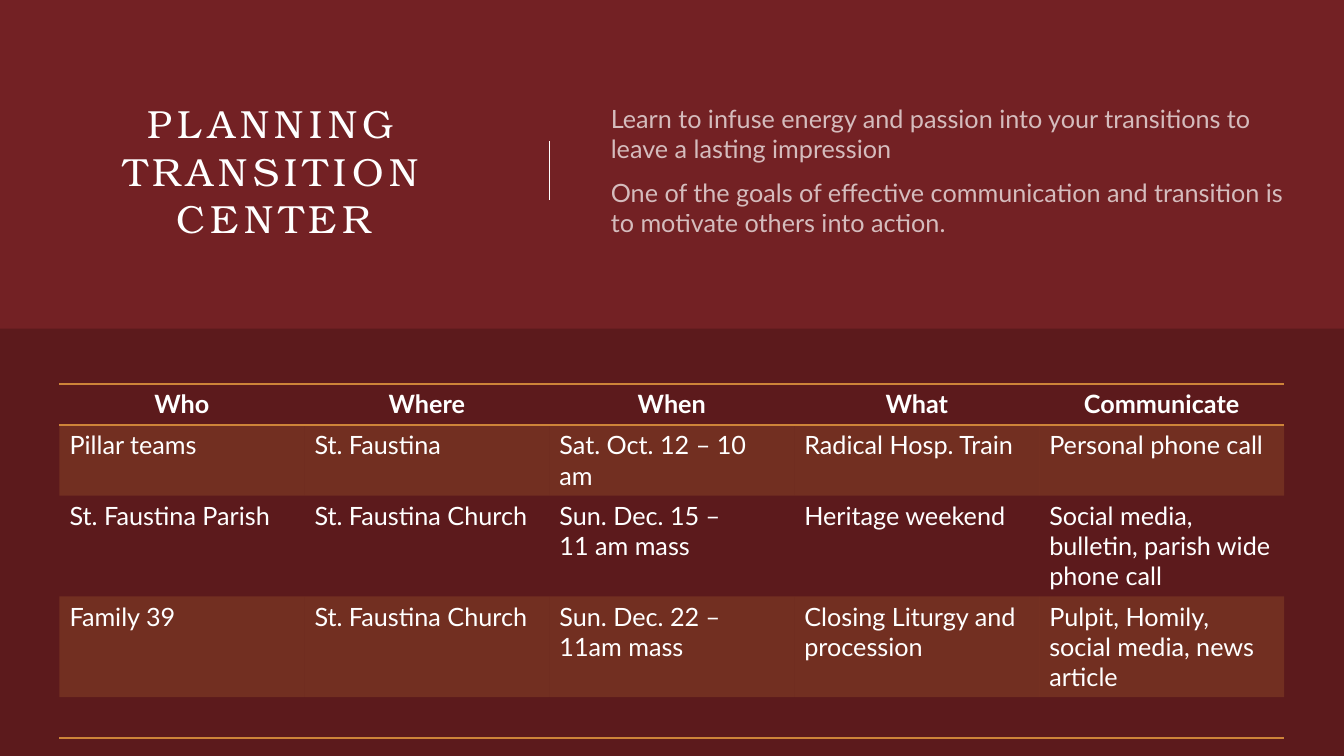
from lxml import etree
from pptx import Presentation
from pptx import util as u
from pptx.dml.color import RGBColor
from pptx.enum import shapes, text
from pptx.oxml.ns import qn

Pt = u.Pt
WINE = RGBColor(0x73, 0x21, 0x24)
BLACK = RGBColor(0, 0, 0)
WHITE = RGBColor(255, 255, 255)
AMBER = RGBColor(0xCE, 0x84, 0x39)
NO_TABLE_STYLE = "{2D5ABB26-0587-4C30-8999-92F81FD0307C}"

INTRO = [
    "Learn to infuse energy and passion into your transitions to leave a lasting impression",
    "One of the goals of effective communication and transition is to motivate others into action.",
]
SCHEDULE = [
    ["Who", "Where", "When", "What", "Communicate"],
    ["Pillar teams", "St. Faustina", "Sat. Oct. 12 – 10 am", "Radical Hosp. Train",
     "Personal phone call"],
    ["St. Faustina Parish", "St. Faustina Church", "Sun. Dec. 15 –\n11 am mass",
     "Heritage weekend", "Social media, bulletin, parish wide phone call"],
    ["Family 39", "St. Faustina Church", "Sun. Dec. 22 –\n11am mass",
     "Closing Liturgy and procession", "Pulpit, Homily, social media, news article"],
    [""] * 5,
]
ROW_HEIGHTS = [29.2, 50.4, 72, 72, 29.2]


class SlideBuilder:
    heading_font = "TeX Gyre Bonum"
    body_font = "Lato"
    body_size = 18

    def __init__(self, page):
        self.page = page

    def set_alpha(self, element, percent):
        for color in element.iter(qn("a:srgbClr")):
            etree.SubElement(color, qn("a:alpha"), val=str(percent * 1000))

    def add_span(self, para, words, font=None, size=None, bold=False):
        span = para.add_run()
        span.text = words
        span.font.name = font or self.body_font
        span.font.size = Pt(size or self.body_size)
        span.font.bold = bold
        span.font.color.rgb = WHITE
        return span

    def prepare_frame(self, box):
        frame = box.text_frame
        frame.word_wrap = True
        frame.auto_size = text.MSO_AUTO_SIZE.NONE
        frame.vertical_anchor = text.MSO_ANCHOR.MIDDLE
        frame.margin_left = frame.margin_right = 0
        frame.margin_top = frame.margin_bottom = 0
        return frame

    def title(self, words, left, top, width, height):
        box = self.page.shapes.title
        box.left, box.top, box.width, box.height = map(Pt, (left, top, width, height))
        para = self.prepare_frame(box).paragraphs[0]
        para.alignment = text.PP_ALIGN.CENTER
        span = self.add_span(para, words, self.heading_font, 28)
        span.font._element.set("spc", "400")

    def body(self, paragraphs, left, top, width, height, opacity):
        box = self.page.shapes.add_textbox(*map(Pt, (left, top, width, height)))
        frame = self.prepare_frame(box)
        for index, words in enumerate(paragraphs):
            para = frame.add_paragraph() if index else frame.paragraphs[0]
            para.space_before = Pt(10)
            span = self.add_span(para, words)
            self.set_alpha(span.font._element, opacity)

    def band(self, left, top, width, height, color, opacity):
        box = self.page.shapes.add_shape(
            shapes.MSO_SHAPE.RECTANGLE, *map(Pt, (left, top, width, height)))
        box.shadow.inherit = False
        box.fill.solid()
        box.fill.fore_color.rgb = color
        self.set_alpha(box._element.spPr, opacity)
        box.line.fill.background()

    def line(self, x1, y1, x2, y2, color):
        rule = self.page.shapes.add_connector(
            shapes.MSO_CONNECTOR.STRAIGHT, *map(Pt, (x1, y1, x2, y2)))
        rule.line.color.rgb = color
        rule.line.width = Pt(1)
        etree.SubElement(rule._element.spPr, qn("a:effectLst"))

    def cell_borders(self, cell, sides):
        properties = cell._tc.get_or_add_tcPr()
        for position, side in enumerate(sides):
            border = etree.Element(qn("a:ln" + side), w=str(Pt(1)))
            fill = etree.SubElement(border, qn("a:solidFill"))
            etree.SubElement(fill, qn("a:srgbClr"), val=str(AMBER))
            properties.insert(position, border)

    def cell(self, cell, words, header, shaded, sides):
        if shaded:
            cell.fill.solid()
            cell.fill.fore_color.rgb = AMBER
            self.set_alpha(cell._tc.tcPr, 20)
        else:
            cell.fill.background()
        self.cell_borders(cell, sides)
        if not words:
            return
        for index, part in enumerate(words.split("\n")):
            frame = cell.text_frame
            para = frame.add_paragraph() if index else frame.paragraphs[0]
            if header:
                para.alignment = text.PP_ALIGN.CENTER
            self.add_span(para, part, bold=header)

    def table(self, rows, heights, left, top, width):
        frame = self.page.shapes.add_table(
            len(rows), len(rows[0]), *map(Pt, (left, top, width, sum(heights))))
        table = frame.table
        table._tbl.tblPr.find(qn("a:tableStyleId")).text = NO_TABLE_STYLE
        borders = {0: "TB", len(rows) - 1: "B"}
        for r, (row, height) in enumerate(zip(rows, heights)):
            table.rows[r].height = Pt(height)
            for c, words in enumerate(row):
                self.cell(table.cell(r, c), words, r == 0, r % 2 == 1, borders.get(r, ""))


def main():
    deck = Presentation()
    deck.slide_width, deck.slide_height = Pt(960), Pt(540)
    page = deck.slides.add_slide(deck.slide_layouts[5])
    page.background.fill.solid()
    page.background.fill.fore_color.rgb = WINE
    builder = SlideBuilder(page)

    # Lower band and divider
    builder.band(0, 234.7, 960, 305.3, BLACK, 20)
    builder.line(392.4, 100.8, 392.4, 143.2, WHITE)

    # Heading and introduction
    builder.title("PLANNING TRANSITION CENTER", 42.5, 42.5, 306, 158.4)
    builder.body(INTRO, 436.3, 42.5, 481, 158.4, 70)

    # Transition schedule
    builder.table(SCHEDULE, ROW_HEIGHTS, 42.5, 274.3, 874.8)

    deck.save("out.pptx")


if __name__ == "__main__":
    main()
